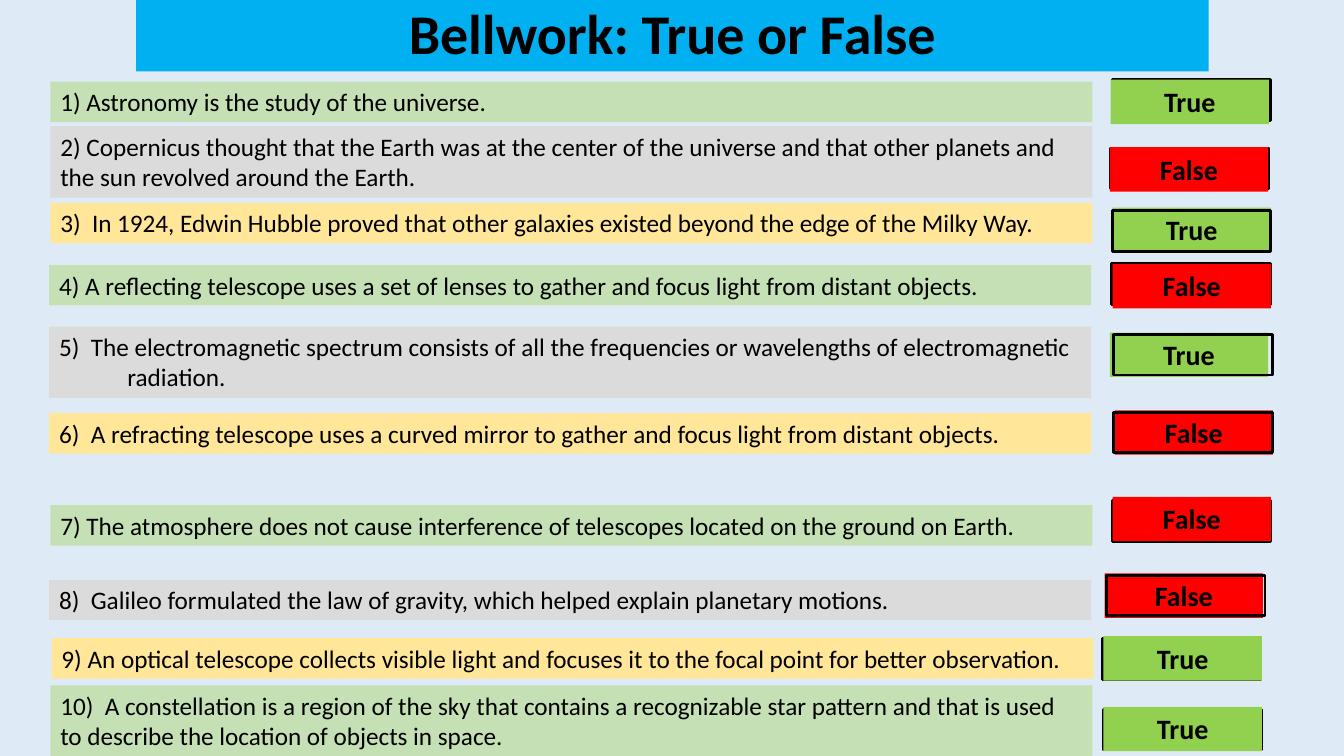
import pptx
import pptx.util
import pptx.dml.color
import pptx.enum.shapes
import pptx.enum.text
from pptx.util import Cm, Pt

COLORS = {
    "background": "DEEBF7",
    "title": "00B0F0",
    "text": "000000",
    "True": "92D050",
    "False": "FF0000",
}
STATEMENT_FILLS = ["C5E0B4", "DBDBDB", "FFE699"]
TITLE = "Bellwork: True or False"

STATEMENTS = [
    ("1) Astronomy is the study of the universe.", 1, "True"),
    ("2) Copernicus thought that the Earth was at the center of the universe and that other planets and the sun revolved around the Earth.", 2, "False"),
    ("3)  In 1924, Edwin Hubble proved that other galaxies existed beyond the edge of the Milky Way.", 1, "True"),
    ("4) A reflecting telescope uses a set of lenses to gather and focus light from distant objects.", 1, "False"),
    ("5)  The electromagnetic spectrum consists of all the frequencies or wavelengths of electromagnetic radiation.", 2, "True"),
    ("6)  A refracting telescope uses a curved mirror to gather and focus light from distant objects.", 1, "False"),
    ("7) The atmosphere does not cause interference of telescopes located on the ground on Earth.", 1, "False"),
    ("8)  Galileo formulated the law of gravity, which helped explain planetary motions.", 1, "False"),
    ("9) An optical telescope collects visible light and focuses it to the focal point for better observation.", 1, "True"),
    ("10)  A constellation is a region of the sky that contains a recognizable star pattern and that is used to describe the location of objects in space.", 2, "True"),
]

PLACES = [
    {"statement": (1.27, 2.06), "answer": (27.99, 2.01), "frame": (28.04, 2.01)},
    {"statement": (1.27, 3.18), "answer": (27.97, 3.71), "frame": (27.99, 3.73)},
    {"statement": (1.27, 5.11), "answer": (28.04, 5.23), "frame": (28.04, 5.31)},
    {"statement": (1.24, 6.68), "answer": (28.04, 6.65), "frame": (28.02, 6.65)},
    {"statement": (1.24, 8.23), "answer": (27.97, 8.38), "frame": (28.07, 8.43)},
    {"statement": (1.24, 10.41), "answer": (28.09, 10.34), "frame": (28.07, 10.39)},
    {"statement": (1.27, 12.73), "answer": (28.04, 12.52), "frame": (28.04, 12.62)},
    {"statement": (1.24, 14.61), "answer": (27.84, 14.45), "frame": (27.89, 14.5)},
    {"statement": (1.3, 16.08), "answer": (27.81, 16.03), "frame": (27.79, 16.1)},
    {"statement": (1.27, 17.27), "answer": (27.81, 17.81), "frame": (27.81, 17.88)},
]
FRAMES_IN_FRONT = {3, 5, 6, 8}
HANGING_INDENTS = {5: 1.72}

STATEMENT_WIDTH = 26.26
STATEMENT_HEIGHTS = {1: 1.02, 2: 1.8}
ANSWER_SIZE = (3.99, 1.12)
FRAME_SIZE = (3.99, 1.02)


def rgb(color):
    return pptx.dml.color.RGBColor.from_string(color)


def add_box(slide, place, size, fill=None):
    shape = slide.shapes.add_shape(
        pptx.enum.shapes.MSO_SHAPE.RECTANGLE, *map(Cm, place + size))
    shape.shadow.inherit = False
    if fill:
        shape.fill.solid()
        shape.fill.fore_color.rgb = rgb(fill)
        shape.line.fill.background()
    else:
        shape.fill.background()
        shape.line.color.rgb = rgb(COLORS["text"])
        shape.line.width = Pt(2)
    return shape


def write(shape, text, size, bold=False, centered=False, anchor="TOP"):
    text_frame = shape.text_frame
    text_frame.word_wrap = True
    text_frame.vertical_anchor = getattr(pptx.enum.text.MSO_ANCHOR, anchor)
    text_frame.text = text
    paragraph = text_frame.paragraphs[0]
    alignment = pptx.enum.text.PP_ALIGN
    paragraph.alignment = alignment.CENTER if centered else alignment.LEFT
    font = paragraph.runs[0].font
    font.name = "Calibri"
    font.size = Pt(size)
    font.bold = bold
    font.color.rgb = rgb(COLORS["text"])
    return paragraph


def add_statement(slide, number, text, lines, place):
    fill = STATEMENT_FILLS[(number - 1) % len(STATEMENT_FILLS)]
    size = (STATEMENT_WIDTH, STATEMENT_HEIGHTS[lines])
    paragraph = write(add_box(slide, place, size, fill), text, 18)
    if number in HANGING_INDENTS:
        indent = Cm(HANGING_INDENTS[number])
        properties = paragraph._p.get_or_add_pPr()
        properties.set("marL", str(indent))
        properties.set("indent", str(-indent))


def add_answer(slide, number, answer, places):
    if number not in FRAMES_IN_FRONT:
        add_box(slide, places["frame"], FRAME_SIZE)
    label = add_box(slide, places["answer"], ANSWER_SIZE, COLORS[answer])
    write(label, answer, 20, bold=True, centered=True)
    if number in FRAMES_IN_FRONT:
        add_box(slide, places["frame"], FRAME_SIZE)


def main():
    presentation = pptx.Presentation()
    presentation.slide_width = Cm(33.87)
    presentation.slide_height = Cm(19.05)
    slide = presentation.slides.add_slide(presentation.slide_layouts[6])
    slide.background.fill.solid()
    slide.background.fill.fore_color.rgb = rgb(COLORS["background"])

    title = add_box(slide, (3.43, -0.08), (27.03, 1.88), COLORS["title"])
    write(title, TITLE, 40, bold=True, centered=True, anchor="BOTTOM").line_spacing = 0.9

    rows = zip(STATEMENTS, PLACES)
    for number, ((text, lines, answer), places) in enumerate(rows, start=1):
        add_statement(slide, number, text, lines, places["statement"])
        add_answer(slide, number, answer, places)

    presentation.save("out.pptx")


if __name__ == "__main__":
    main()
